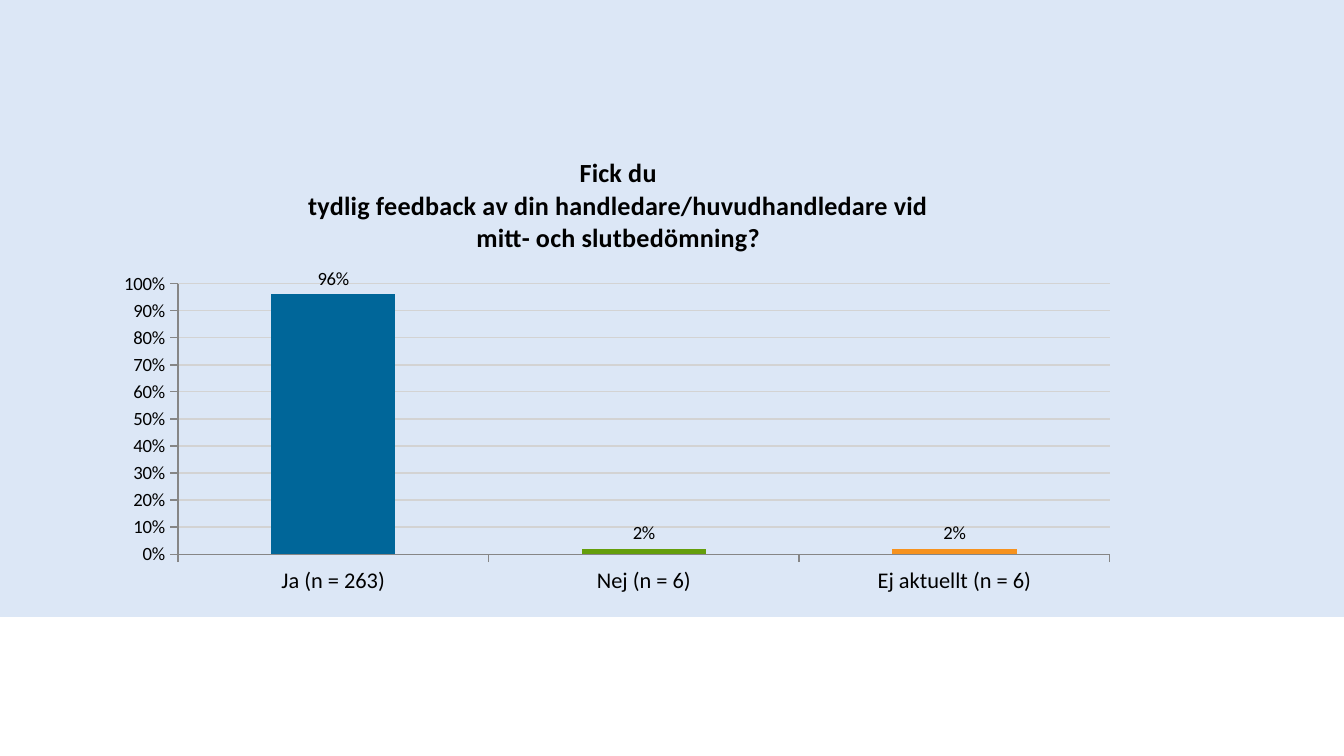
from dataclasses import dataclass

from lxml.etree import SubElement
from pptx import Presentation
from pptx.chart.data import CategoryChartData
from pptx.dml.color import RGBColor
from pptx.enum.chart import XL_CHART_TYPE, XL_LABEL_POSITION, XL_TICK_MARK
from pptx.enum.shapes import MSO_SHAPE
from pptx.oxml.ns import qn
from pptx.util import Pt


@dataclass(frozen=True)
class Theme:
    font: str = "Calibri"
    panel: RGBColor = RGBColor(0xDC, 0xE7, 0xF6)
    text: RGBColor = RGBColor(0, 0, 0)
    grid: RGBColor = RGBColor(0xD3, 0xD3, 0xD3)
    axis: RGBColor = RGBColor(0x86, 0x86, 0x86)
    bars: tuple = (
        RGBColor(0x00, 0x66, 0x99),
        RGBColor(0x64, 0x9E, 0x0B),
        RGBColor(0xF6, 0x92, 0x1E),
    )
    base_size: Pt = Pt(18)
    title_size: Pt = Pt(14)
    category_size: Pt = Pt(12)
    value_size: Pt = Pt(10)


theme = Theme()


def style_font(font, size, bold=False):
    font.name = theme.font
    font.size = size
    font.bold = bold
    font.color.rgb = theme.text


# Slide
deck = Presentation()
deck.slide_width, deck.slide_height = Pt(720), Pt(405)
slide = deck.slides.add_slide(deck.slide_layouts[6])

# Background panel
panel = slide.shapes.add_shape(MSO_SHAPE.RECTANGLE, 0, 0, deck.slide_width, Pt(330.5))
panel.shadow.inherit = False
panel.fill.solid()
panel.fill.fore_color.rgb = theme.panel
panel.line.fill.background()

# Chart with answer shares
answers = CategoryChartData(number_format="0%")
answers.categories = ["Ja (n = 263)", "Nej (n = 6)", "Ej aktuellt (n = 6)"]
answers.add_series("Series 1", (0.96, 0.02, 0.02))
chart = slide.shapes.add_chart(
    XL_CHART_TYPE.COLUMN_CLUSTERED, Pt(57), Pt(72), Pt(548.5), Pt(250), answers
).chart
chart.has_legend = False
style_font(chart.font, theme.base_size)

# Chart title
title_lines = (
    "Fick du",
    "tydlig feedback av din handledare/huvudhandledare vid",
    "mitt- och slutbedömning?",
)
title_frame = chart.chart_title.text_frame
for index, line in enumerate(title_lines):
    para = title_frame.add_paragraph() if index else title_frame.paragraphs[0]
    span = para.add_run()
    span.text = line
    style_font(span.font, theme.title_size, bold=True)
chart.chart_title.include_in_layout = False

# Axes and gridlines
for axis, size in (
    (chart.category_axis, theme.category_size),
    (chart.value_axis, theme.value_size),
):
    axis.major_tick_mark = XL_TICK_MARK.OUTSIDE
    axis.minor_tick_mark = XL_TICK_MARK.NONE
    axis.format.line.color.rgb = theme.axis
    axis.format.line.width = Pt(0.75)
    style_font(axis.tick_labels.font, size)
value_axis = chart.value_axis
value_axis.minimum_scale, value_axis.maximum_scale = 0, 1
value_axis.major_unit = 0.1
value_axis.tick_labels.number_format = "0%"
value_axis.tick_labels.number_format_is_linked = False
value_axis.has_major_gridlines = True
value_axis.major_gridlines.format.line.color.rgb = theme.grid
value_axis.major_gridlines.format.line.width = Pt(0.75)

# Columns
plot = chart.plots[0]
plot.gap_width = 150
plot.vary_by_categories = False
series = plot.series[0]
series.format.fill.solid()
series.format.fill.fore_color.rgb = theme.bars[0]
for index, color in enumerate(theme.bars[1:], start=1):
    fill = series.points[index].format.fill
    fill.solid()
    fill.fore_color.rgb = color

# Value labels
labels = series.data_labels
labels.show_value = True
labels.position = XL_LABEL_POSITION.OUTSIDE_END
labels.number_format = "0%"
labels.number_format_is_linked = False
style_font(labels.font, theme.value_size)

# Inner plot area, as fractions of the chart
plot_area = plot._element.getparent()
layout = plot_area.find(qn("c:layout"))
if layout is None:
    layout = SubElement(plot_area, qn("c:layout"))
    plot_area.insert(0, layout)
manual = SubElement(layout, qn("c:manualLayout"))
for tag, value in (
    ("layoutTarget", "inner"),
    ("xMode", "edge"),
    ("yMode", "edge"),
    ("x", "0.07"),
    ("y", "0.32"),
    ("w", "0.91"),
    ("h", "0.58"),
):
    SubElement(manual, qn(f"c:{tag}")).set("val", value)

deck.save("out.pptx")
